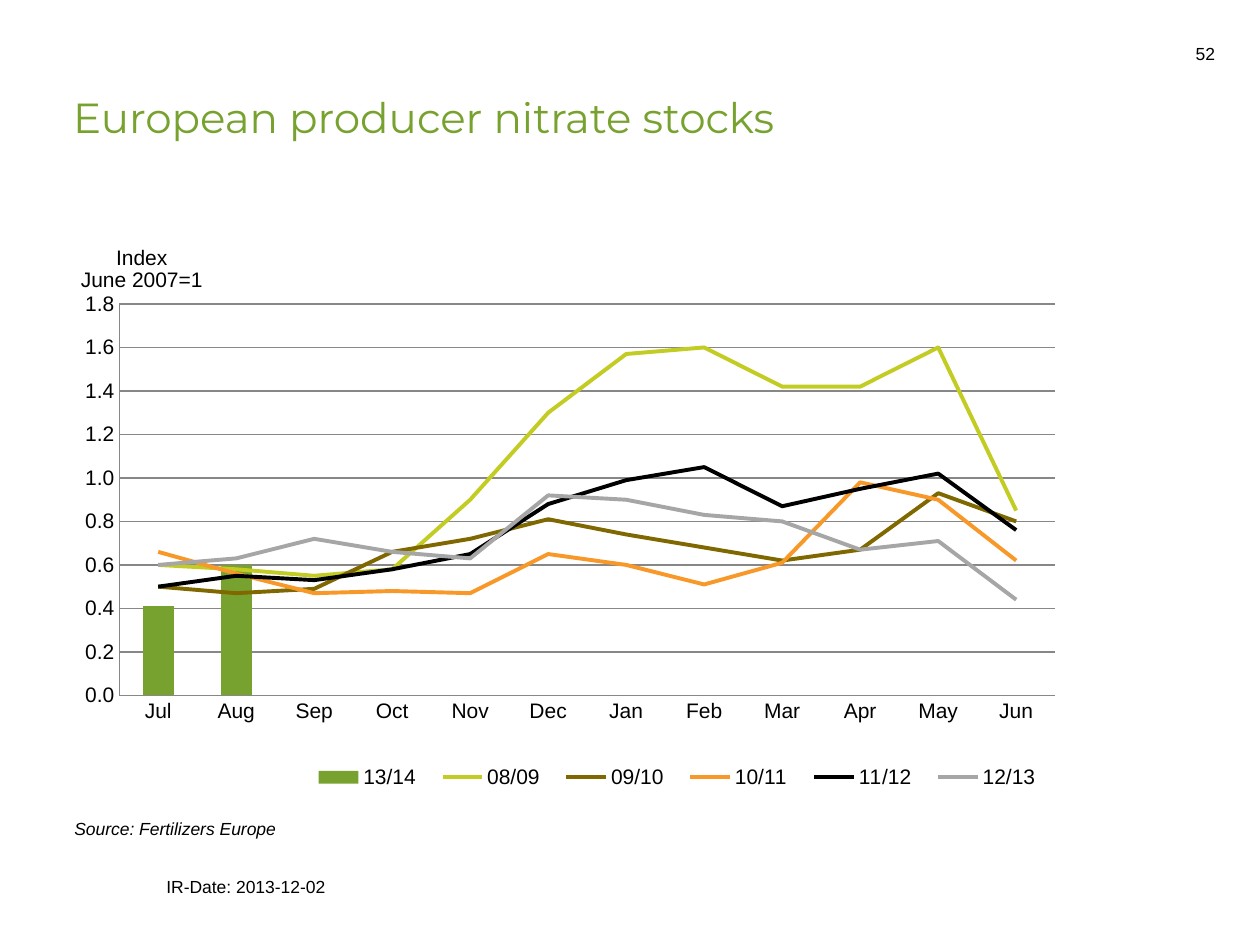
from lxml import etree
from pptx import Presentation
from pptx import util as u
from pptx.chart.data import CategoryChartData
from pptx.dml.color import RGBColor
from pptx.enum import chart as ch, text
from pptx.oxml import parse_xml
from pptx.oxml.ns import nsdecls, qn

GREEN = RGBColor(0x78, 0xA2, 0x2F)
LIME = RGBColor(0xC2, 0xCC, 0x23)
BROWN = RGBColor(0x80, 0x68, 0x00)
ORANGE = RGBColor(0xF8, 0x98, 0x28)
BLACK = RGBColor(0, 0, 0)
SILVER = RGBColor(0xA6, 0xA6, 0xA6)
GRID = RGBColor(0x87, 0x87, 0x87)

MONTHS = "Jul Aug Sep Oct Nov Dec Jan Feb Mar Apr May Jun".split()
STOCKS = [
    ("13/14", GREEN, [0.41, 0.6] + [None] * 10),
    ("08/09", LIME, [0.6, 0.58, 0.55, 0.58, 0.9, 1.3, 1.57, 1.6, 1.42, 1.42, 1.6, 0.85]),
    ("09/10", BROWN, [0.5, 0.47, 0.49, 0.66, 0.72, 0.81, 0.74, 0.68, 0.62, 0.67, 0.93, 0.8]),
    ("10/11", ORANGE, [0.66, 0.56, 0.47, 0.48, 0.47, 0.65, 0.6, 0.51, 0.61, 0.98, 0.9, 0.62]),
    ("11/12", BLACK, [0.5, 0.55, 0.53, 0.58, 0.65, 0.88, 0.99, 1.05, 0.87, 0.95, 1.02, 0.76]),
    ("12/13", SILVER, [0.6, 0.63, 0.72, 0.66, 0.63, 0.92, 0.9, 0.83, 0.8, 0.67, 0.71, 0.44]),
]


def inches(*lengths):
    return [u.Inches(n) for n in lengths]


def style(font, size, color=BLACK, name="Arial"):
    font.size, font.name = u.Pt(size), name
    font.color.rgb = color


def add_title(s, words):
    sp = s.shapes.title
    sp.left, sp.top, sp.width, sp.height = inches(0.58, 0.25, 8.83, 0.93)
    tf = sp.text_frame
    tf.text = words
    tf.margin_left = 0
    tf.vertical_anchor = text.MSO_ANCHOR.BOTTOM
    p = tf.paragraphs[0]
    p.alignment = text.PP_ALIGN.LEFT
    style(p.font, 24, GREEN, "Montserrat")


def add_label(s, words, left, top, width, wrap=False, italic=False):
    tf = s.shapes.add_textbox(*inches(left, top, width, 0.27)).text_frame
    tf.word_wrap = wrap
    tf.margin_left = tf.margin_right = u.Inches(0.08)
    p = tf.paragraphs[0]
    p.text = words
    style(p.font, 10)
    p.font.italic = italic


def set_layout(parent, index, inner=False, **shares):
    for old in parent.findall(qn("c:layout")):
        parent.remove(old)
    target = '<c:layoutTarget val="inner"/>' if inner else ""
    modes = "".join(f'<c:{k}Mode val="edge"/>' for k in "xy")
    values = "".join(f'<c:{k} val="{v}"/>' for k, v in shares.items())
    parent.insert(index, parse_xml(
        f'<c:layout {nsdecls("c")}><c:manualLayout>{target}{modes}{values}'
        '</c:manualLayout></c:layout>'))


def bars_to_lines(bar, sers):
    line = etree.Element(qn("c:lineChart"))
    etree.SubElement(line, qn("c:grouping"), val="standard")
    etree.SubElement(line, qn("c:varyColors"), val="0")
    for ser in sers:
        for flag in ser.findall(qn("c:invertIfNegative")):
            ser.remove(flag)
        marker = etree.Element(qn("c:marker"))
        etree.SubElement(marker, qn("c:symbol"), val="none")
        ser.find(qn("c:spPr")).addnext(marker)
        etree.SubElement(ser, qn("c:smooth"), val="0")
        line.append(ser)
    etree.SubElement(line, qn("c:marker"), val="1")
    for axis in bar.findall(qn("c:axId")):
        etree.SubElement(line, qn("c:axId"), val=axis.get("val"))
    bar.addnext(line)


def format_axes(chart):
    for axis in (chart.category_axis, chart.value_axis):
        axis.major_tick_mark = axis.minor_tick_mark = ch.XL_TICK_MARK.NONE
        axis.format.line.color.rgb = GRID
        axis.format.line.width = u.Pt(0.75)
    axis = chart.value_axis
    axis.minimum_scale, axis.maximum_scale, axis.major_unit = 0, 1.8, 0.2
    axis.tick_labels.number_format = "#,##0.0"
    axis.tick_labels.number_format_is_linked = False
    axis.has_major_gridlines = True
    axis.major_gridlines.format.line.color.rgb = GRID
    axis.major_gridlines.format.line.width = u.Pt(0.75)
    title = axis.axis_title
    tf = title.text_frame
    tf.text = "Index\nJune 2007=1"
    for p in tf.paragraphs:
        style(p.font, 12)
        p.font.bold = False
    body = title._element.find(".//" + qn("a:bodyPr"))
    body.set("rot", "0")
    body.set("vert", "horz")
    set_layout(title._element, 1, x=0.004, y=0.015)


def add_stock_chart(s):
    data = CategoryChartData(number_format="#,##0.0")
    data.categories = MONTHS
    for name, _, values in STOCKS:
        data.add_series(name, values)
    chart = s.shapes.add_chart(ch.XL_CHART_TYPE.COLUMN_CLUSTERED,
                               *inches(0.58, 1.84, 7.8, 4.51), data).chart
    style(chart.font, 12)
    chart.has_title = False
    plot = chart.plots[0]
    plot.gap_width, plot.vary_by_categories = 150, False
    stocks, *history = plot.series
    stocks.format.fill.solid()
    stocks.format.fill.fore_color.rgb = GREEN
    for series, (_, color, _) in zip(history, STOCKS[1:]):
        series.format.line.color.rgb = color
        series.format.line.width = u.Pt(2.25)
    bar = plot._element
    bars_to_lines(bar, [series._element for series in history])
    format_axes(chart)
    set_layout(bar.getparent(), 0, inner=True, x=0.047, y=0.127, w=0.953, h=0.689)
    chart.has_legend = True
    chart.legend.position = ch.XL_LEGEND_POSITION.BOTTOM
    chart.legend.include_in_layout = False
    set_layout(chart.legend._element, 1, x=0.23, y=0.93, w=0.77, h=0.06)


def main():
    prs = Presentation()
    prs.slide_width, prs.slide_height = inches(10, 7.5)
    s = prs.slides.add_slide(prs.slide_layouts[5])
    add_label(s, "IR-Date: 2013-12-02", 1.24, 6.9, 2.91, wrap=True)
    add_label(s, "52", 9.41, 0.29, 0.37)
    add_stock_chart(s)
    add_label(s, "Source: Fertilizers Europe", 0.51, 6.44, 1.77, italic=True)
    add_title(s, "European producer nitrate stocks")
    prs.save("out.pptx")


if __name__ == "__main__":
    main()
